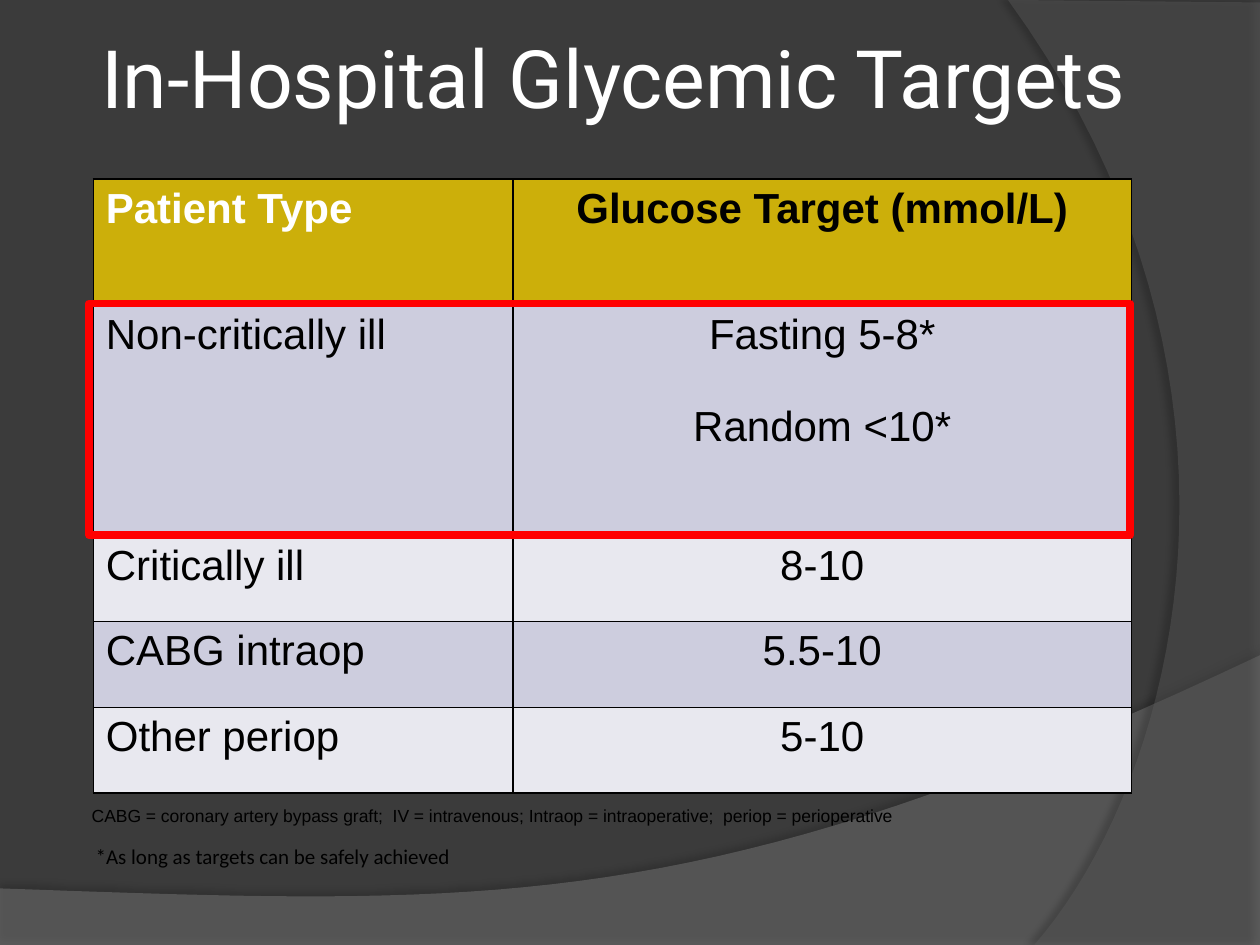
from lxml import etree
from pptx import Presentation
from pptx.dml.color import RGBColor
from pptx.enum.shapes import MSO_SHAPE
from pptx.enum.text import MSO_ANCHOR, PP_ALIGN
from pptx.oxml.ns import qn
from pptx.util import Cm, Pt

RECTANGLE = MSO_SHAPE.RECTANGLE
TOP, MIDDLE = MSO_ANCHOR.TOP, MSO_ANCHOR.MIDDLE
LEFT, CENTER = PP_ALIGN.LEFT, PP_ALIGN.CENTER

BLACK = RGBColor(0x00, 0x00, 0x00)
WHITE = RGBColor(0xFF, 0xFF, 0xFF)
RED = RGBColor(0xFF, 0x00, 0x00)
CHARCOAL = RGBColor(0x3B, 0x3B, 0x3B)
GRAY = RGBColor(0x7F, 0x7F, 0x7F)
DARK_GRAY = RGBColor(0x5E, 0x5E, 0x5E)
GOLD = RGBColor(0xCC, 0xAF, 0x0A)
LAVENDER = RGBColor(0xCD, 0xCD, 0xDE)
PALE = RGBColor(0xE8, 0xE8, 0xEF)

ROWS = [
    ("Patient Type", ["Glucose Target (mmol/L)"]),
    ("Non-critically ill", ["Fasting 5-8*", "Random <10*"]),
    ("Critically ill", ["8-10"]),
    ("CABG intraop", ["5.5-10"]),
    ("Other periop", ["5-10"]),
]
COLUMN_WIDTHS = [8.46, 12.47]
ROW_HEIGHTS = [2.54, 4.65, 1.73, 1.73, 1.73]
TABLE_LEFT, TABLE_TOP = 1.88, 3.61

TEXTS = [
    ("In-Hospital Glycemic Targets", (1.91, -0.05, 21.59, 3.18), "Roboto", 46, WHITE, MIDDLE, 0.13),
    ("CABG = coronary artery bypass graft;  IV = intravenous; Intraop = intraoperative;  periop = perioperative",
     (1.6, 16.1, 20.24, 0.69), "Arial", 10, BLACK, TOP, 0.25),
    ("*As long as targets can be safely achieved",
     (1.68, 16.87, 7.7, 0.76), "Calibri", 12, BLACK, TOP, 0.25),
]

SWEEPS = [
    {"corners": [(0, 19.05), (25.4, 19.05)],
     "curve": [(25.4, 13.21), (14.2, 18.52), (9.93, 18.26), (0, 17.91)],
     "color": GRAY, "alpha": 45, "shadow": (35, 4, 3.5, 270)},
    {"corners": [(25.4, 0.05), (25.4, 19.05)],
     "curve": [(20.85, 19.05), (23.75, 15.72), (25.86, 7.62), (20.32, 0)],
     "color": DARK_GRAY, "alpha": 40, "shadow": (45, 4, 4, 180)},
]
CURVE_STEPS = 40


def curve_points(a, b, c, d):
    for step in range(CURVE_STEPS + 1):
        t = step / CURVE_STEPS
        weights = ((1 - t) ** 3, 3 * t * (1 - t) ** 2, 3 * t * t * (1 - t), t ** 3)
        yield tuple(sum(w * point[axis] for w, point in zip(weights, (a, b, c, d)))
                    for axis in (0, 1))


def add_child(parent, tag, **attributes):
    return etree.SubElement(parent, qn(tag), {k: str(v) for k, v in attributes.items()})


def add_sweep(slide, corners, curve, color, alpha, shadow):
    points = [(Cm(x), Cm(y)) for x, y in [*corners, *curve_points(*curve)]]
    builder = slide.shapes.build_freeform(*points[0])
    builder.add_line_segments(points[1:])
    shape = builder.convert_to_shape()
    shape.fill.solid()
    shape.fill.fore_color.rgb = color
    shape.line.fill.background()
    properties = shape._element.spPr
    add_child(properties.find(".//" + qn("a:srgbClr")), "a:alpha", val=alpha * 1000)
    opacity, blur, distance, angle = shadow
    effects = add_child(properties, "a:effectLst")
    outer = add_child(effects, "a:outerShdw", blurRad=Pt(blur), dist=Pt(distance),
                      dir=angle * 60000, algn="ctr", rotWithShape=0)
    tint = add_child(outer, "a:srgbClr", val=BLACK)
    add_child(tint, "a:alpha", val=opacity * 1000)


def add_run(paragraph, text, font, size, color, bold=False):
    run = paragraph.add_run()
    run.text = text
    run.font.name = font
    run.font.size = Pt(size)
    run.font.color.rgb = color
    run.font.bold = bold


def add_text(slide, text, box, font, size, color, anchor, inset):
    frame = slide.shapes.add_textbox(*map(Cm, box)).text_frame
    frame.word_wrap = True
    frame.vertical_anchor = anchor
    frame.margin_left = frame.margin_right = Cm(inset)
    frame.margin_top = frame.margin_bottom = Cm(0.13)
    add_run(frame.paragraphs[0], text, font, size, color)


def add_borders(cell):
    properties = cell._tc.get_or_add_tcPr()
    for index, side in enumerate(("a:lnL", "a:lnR", "a:lnT", "a:lnB")):
        line = add_child(properties, side, w=Pt(1))
        add_child(add_child(line, "a:solidFill"), "a:srgbClr", val=BLACK)
        properties.insert(index, line)


def fill_cell(cell, lines, fill, alignment, color, bold):
    cell.fill.solid()
    cell.fill.fore_color.rgb = fill
    add_borders(cell)
    frame = cell.text_frame
    for index, line in enumerate(lines):
        paragraph = frame.add_paragraph() if index else frame.paragraphs[0]
        paragraph.alignment = alignment
        if index:
            paragraph.space_before = Pt(26)
        add_run(paragraph, line, "Arial", 24, color, bold)


def add_target_table(slide):
    table = slide.shapes.add_table(
        len(ROWS), len(COLUMN_WIDTHS), Cm(TABLE_LEFT), Cm(TABLE_TOP),
        Cm(sum(COLUMN_WIDTHS)), Cm(sum(ROW_HEIGHTS))).table
    for column, width in zip(table.columns, COLUMN_WIDTHS):
        column.width = Cm(width)
    for index, (patient, targets) in enumerate(ROWS):
        table.rows[index].height = Cm(ROW_HEIGHTS[index])
        header = index == 0
        fill = GOLD if header else LAVENDER if index % 2 else PALE
        fill_cell(table.cell(index, 0), [patient], fill, LEFT, WHITE if header else BLACK, header)
        fill_cell(table.cell(index, 1), targets, fill, CENTER, BLACK, header)


def add_highlight(slide):
    shape = slide.shapes.add_shape(RECTANGLE, Cm(1.8), Cm(6.12), Cm(20.98), Cm(4.67))
    shape.shadow.inherit = False
    shape.fill.background()
    shape.line.color.rgb = RED
    shape.line.width = Pt(4.5)


def main():
    presentation = Presentation()
    presentation.slide_width, presentation.slide_height = Cm(25.4), Cm(19.05)
    slide = presentation.slides.add_slide(presentation.slide_layouts[6])
    slide.background.fill.solid()
    slide.background.fill.fore_color.rgb = CHARCOAL
    for sweep in SWEEPS:
        add_sweep(slide, **sweep)
    add_target_table(slide)
    for text in TEXTS:
        add_text(slide, *text)
    add_highlight(slide)
    presentation.save("out.pptx")


if __name__ == "__main__":
    main()
